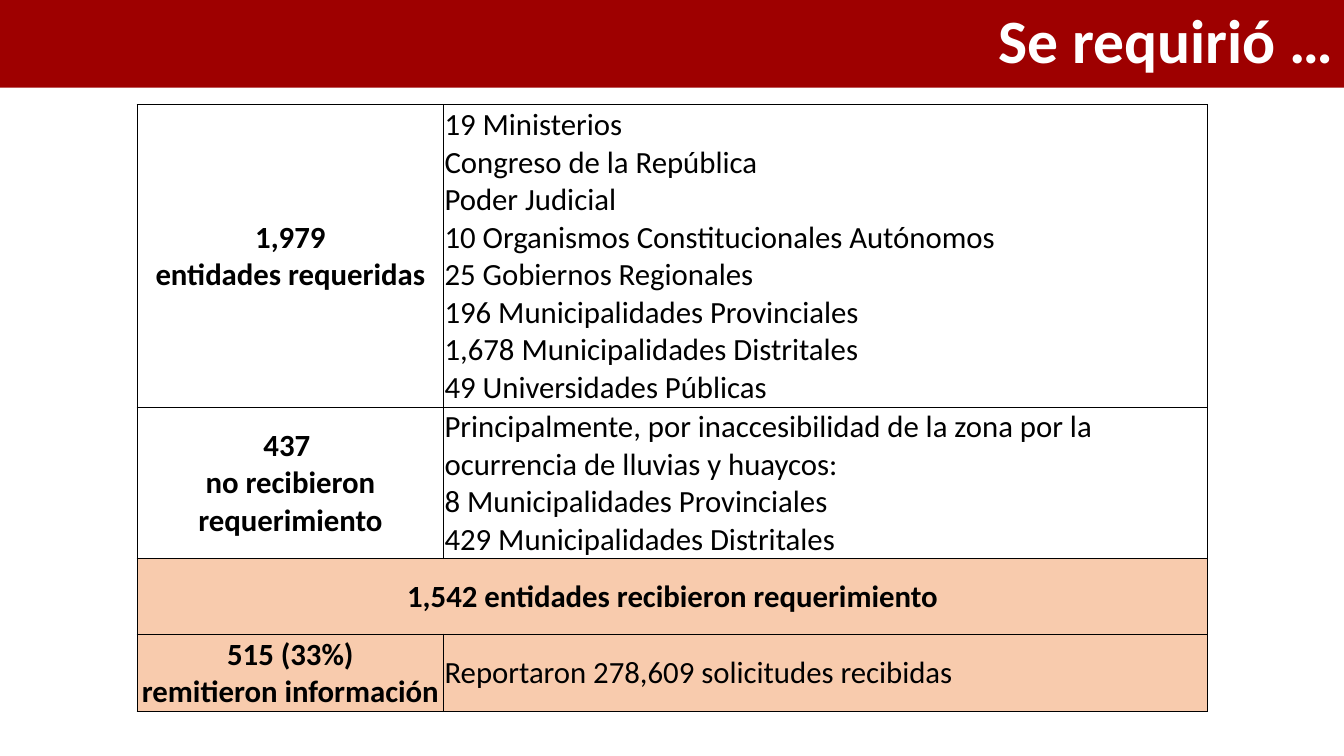
"""Builds the slide on the entities that were asked for information."""
from lxml import etree
from pptx import Presentation
from pptx.dml.color import RGBColor
from pptx.enum.text import MSO_ANCHOR, MSO_AUTO_SIZE, PP_ALIGN
from pptx.oxml.ns import qn
from pptx.util import Inches, Pt

MIDDLE = MSO_ANCHOR.MIDDLE
NO_AUTOFIT = MSO_AUTO_SIZE.NONE
LEFT, CENTER, RIGHT = PP_ALIGN.LEFT, PP_ALIGN.CENTER, PP_ALIGN.RIGHT

FONT = "Calibri"
COLORS = {"banner": "9E0000", "white": "FFFFFF", "black": "000000", "peach": "F8CBAD"}
SLIDE_WIDTH, SLIDE_HEIGHT = 13.33, 7.5
TITLE_ONLY_LAYOUT = 5
COLUMN_WIDTHS = [3.04, 7.58]
ROW_HEIGHTS = [3, 1.5, 0.75, 0.77]
FIRST_PEACH_ROW = 2
OUTER_BORDER, INNER_BORDER = 1, 0.5

ROWS = [
    (
        ["1,979", "entidades requeridas"],
        [
            "19 Ministerios",
            "Congreso de la República",
            "Poder Judicial",
            "10 Organismos Constitucionales Autónomos",
            "25 Gobiernos Regionales",
            "196 Municipalidades Provinciales",
            "1,678 Municipalidades Distritales",
            "49 Universidades Públicas",
        ],
    ),
    (
        ["437 ", "no recibieron requerimiento"],
        [
            "Principalmente, por inaccesibilidad de la zona por la "
            "ocurrencia de lluvias y huaycos:",
            "8 Municipalidades Provinciales",
            "429 Municipalidades Distritales",
        ],
    ),
    (["1,542 entidades recibieron requerimiento"], None),
    (["515 (33%)", "remitieron información"], ["Reportaron 278,609 solicitudes recibidas"]),
]


def format_runs(paragraph, size, color, bold):
    """Apply the slide font to every run of a paragraph."""
    for run in paragraph.runs:
        run.font.name = FONT
        run.font.size = Pt(size)
        run.font.bold = bold
        run.font.color.rgb = RGBColor.from_string(COLORS[color])


def add_title(slide, text):
    """Turn the title placeholder into the banner across the top."""
    title = slide.shapes.title
    title.left, title.top = Inches(0), Inches(0)
    title.width, title.height = Inches(SLIDE_WIDTH), Inches(0.87)
    title.fill.solid()
    title.fill.fore_color.rgb = RGBColor.from_string(COLORS["banner"])
    text_frame = title.text_frame
    text_frame.text = text
    text_frame.auto_size = NO_AUTOFIT
    text_frame.vertical_anchor = MIDDLE
    paragraph = text_frame.paragraphs[0]
    paragraph.alignment = RIGHT
    paragraph.line_spacing = 0.9
    format_runs(paragraph, 44, "white", True)


def set_borders(cell, row, column):
    """Draw thick lines on the table's edge and thin ones inside."""
    on_edge = {
        "a:lnL": column == 0,
        "a:lnR": column == len(COLUMN_WIDTHS) - 1 or cell.is_merge_origin,
        "a:lnT": row == 0,
        "a:lnB": row == len(ROW_HEIGHTS) - 1,
    }
    properties = cell._tc.get_or_add_tcPr()
    for tag, is_edge in on_edge.items():
        width = Pt(OUTER_BORDER if is_edge else INNER_BORDER)
        line = etree.SubElement(properties, qn(tag), w=str(width))
        fill = etree.SubElement(line, qn("a:solidFill"))
        etree.SubElement(fill, qn("a:srgbClr"), val=COLORS["black"])


def set_fill(cell, row):
    """Fill the result rows with peach and leave the others clear."""
    if row >= FIRST_PEACH_ROW:
        cell.fill.solid()
        cell.fill.fore_color.rgb = RGBColor.from_string(COLORS["peach"])
    else:
        cell.fill.background()


def fill_cell(cell, lines, is_heading):
    """Write the lines of a cell as a heading or as details."""
    cell.margin_left = cell.margin_right = cell.margin_top = Inches(0.01)
    cell.margin_bottom = Inches(0)
    cell.vertical_anchor = MIDDLE
    paragraph = cell.text_frame.paragraphs[0]
    paragraph.text = "\v".join(lines)
    paragraph.alignment = CENTER if is_heading else LEFT
    format_runs(paragraph, 22, "black", is_heading)


def add_entities_table(slide):
    """Add the table of entities, merging rows without details."""
    frame = slide.shapes.add_table(
        len(ROW_HEIGHTS), len(COLUMN_WIDTHS), Inches(1.36), Inches(1.04),
        Inches(sum(COLUMN_WIDTHS)), Inches(sum(ROW_HEIGHTS)),
    )
    table = frame.table
    table.first_row = table.horz_banding = False
    for column, width in zip(table.columns, COLUMN_WIDTHS):
        column.width = Inches(width)
    for row, height in zip(table.rows, ROW_HEIGHTS):
        row.height = Inches(height)
    for row_index, row_texts in enumerate(ROWS):
        if row_texts[1] is None:
            table.cell(row_index, 0).merge(table.cell(row_index, 1))
        for column_index, lines in enumerate(row_texts):
            cell = table.cell(row_index, column_index)
            set_borders(cell, row_index, column_index)
            set_fill(cell, row_index)
            if lines:
                fill_cell(cell, lines, column_index == 0)


def main():
    """Build and save the presentation."""
    presentation = Presentation()
    presentation.slide_width = Inches(SLIDE_WIDTH)
    presentation.slide_height = Inches(SLIDE_HEIGHT)
    slide = presentation.slides.add_slide(presentation.slide_layouts[TITLE_ONLY_LAYOUT])
    add_title(slide, "Se requirió …")
    add_entities_table(slide)
    presentation.save("out.pptx")


if __name__ == "__main__":
    main()
